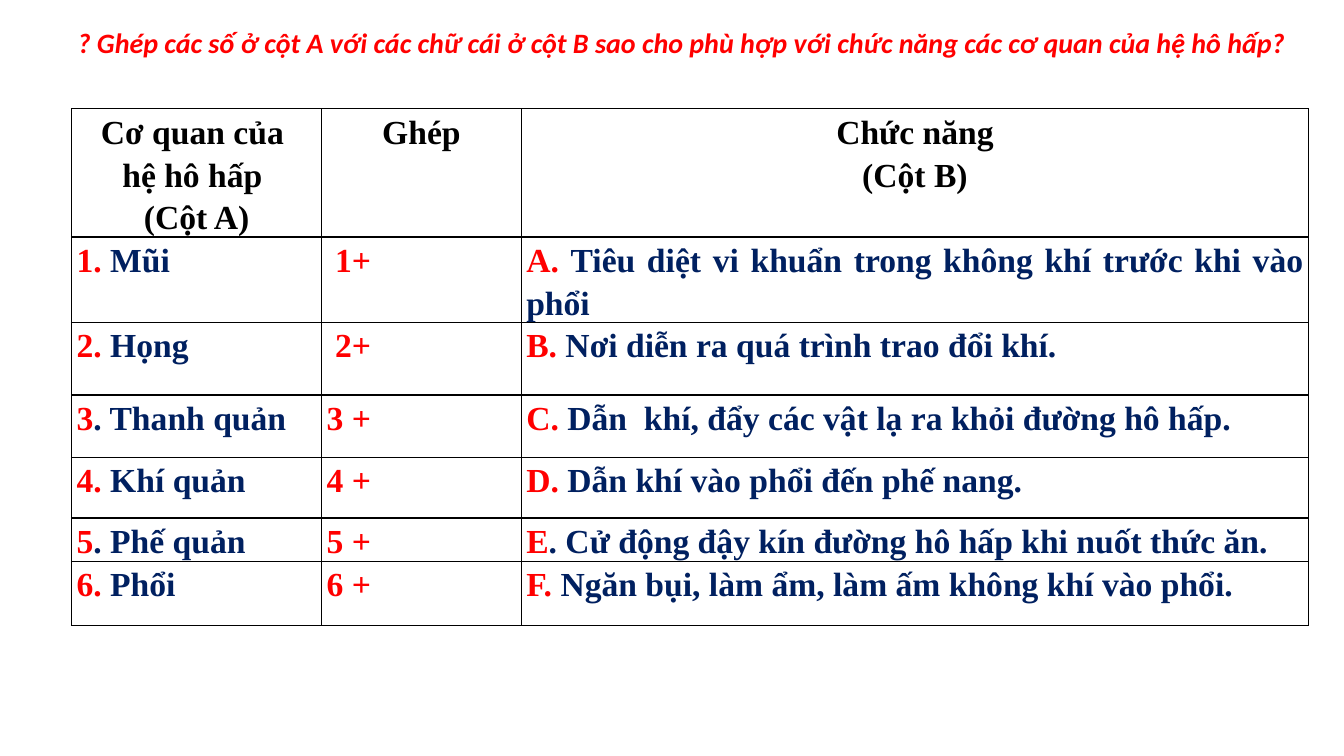
from lxml import etree
from pptx import Presentation
from pptx.dml.color import RGBColor
from pptx.enum.text import MSO_ANCHOR, PP_ALIGN
from pptx.oxml.ns import qn
from pptx.util import Inches, Pt

# Content: each cell is a list of paragraphs, each paragraph a list of (text, colour) runs
BLACK = RGBColor(0, 0, 0)
RED = RGBColor(255, 0, 0)
NAVY = RGBColor(0, 0x20, 0x60)
WHITE = RGBColor(255, 255, 255)

QUESTION = ("? Ghép các số ở cột A với các chữ cái ở cột B sao cho phù hợp "
            "với chức năng các cơ quan của hệ hô hấp?")
HEADERS = [["Cơ quan của ", "hệ hô hấp ", "(Cột A)"], ["Ghép"], ["Chức năng", "(Cột B)"]]
MATCHES = [  # number, organ, answer space, letter, function
    ("1. ", "Mũi", " 1+", "A. ", "Tiêu diệt vi khuẩn trong không khí trước khi vào phổi"),
    ("2. ", "Họng", " 2+ ", "B. ", "Nơi diễn ra quá trình trao đổi khí."),
    ("3", ". Thanh quản", "3 + ", "C. ", "Dẫn  khí, đẩy các vật lạ ra khỏi đường hô hấp."),
    ("4. ", "Khí quản", "4 + ", "D. ", "Dẫn khí vào phổi đến phế nang."),
    ("5", ". Phế quản", "5 +", "E", ". Cử động đậy kín đường hô hấp khi nuốt thức ăn."),
    ("6. ", "Phổi", "6 + ", "F. ", "Ngăn bụi, làm ẩm, làm ấm không khí vào phổi."),
]

# Layout in inches
SLIDE_SIZE = (13.33, 7.5)
TITLE_BOX = (0.67, 0.2, 12.42, 0.44)
TABLE_ORIGIN = (0.71, 1.08)
COLUMN_WIDTHS = (2.48, 1.98, 7.81)
ROW_HEIGHTS = (0.88, 0.69, 0.72, 0.62, 0.6, 0.43, 0.64)
CELL_MARGIN = 0.05

CENTER, JUSTIFY, LEFT = PP_ALIGN.CENTER, PP_ALIGN.JUSTIFY, PP_ALIGN.LEFT
MIDDLE, TOP = MSO_ANCHOR.MIDDLE, MSO_ANCHOR.TOP


def write_text(frame, paragraphs, font="Times New Roman", size=24, italic=False,
               align=JUSTIFY, spacing=1.15):
    for index, runs in enumerate(paragraphs):
        paragraph = frame.add_paragraph() if index else frame.paragraphs[0]
        paragraph.alignment = align
        paragraph.line_spacing = spacing
        paragraph.space_before = Pt(0)
        for text, color in runs:
            run = paragraph.add_run()
            run.text = text
            run.font.name = font
            run.font.size = Pt(size)
            run.font.bold = True
            run.font.italic = italic
            run.font.color.rgb = color


def add_borders(cell):
    properties = cell._tc.get_or_add_tcPr()
    for index, side in enumerate(("lnL", "lnR", "lnT", "lnB")):
        line = etree.Element(qn("a:" + side), w=str(Pt(1)))
        fill = etree.SubElement(line, qn("a:solidFill"))
        etree.SubElement(fill, qn("a:srgbClr"), val=str(BLACK))
        properties.insert(index, line)


def add_match_table(slide):
    rows = [[[[(line, BLACK)] for line in header] for header in HEADERS]]
    for number, organ, answer, letter, function in MATCHES:
        rows.append([[[(number, RED), (organ, NAVY)]],
                     [[(answer, RED)]],
                     [[(letter, RED), (function, NAVY)]]])

    left, top = TABLE_ORIGIN
    table = slide.shapes.add_table(
        len(rows), len(COLUMN_WIDTHS), Inches(left), Inches(top),
        Inches(sum(COLUMN_WIDTHS)), Inches(sum(ROW_HEIGHTS))).table
    table.horz_banding = False
    for column, width in zip(table.columns, COLUMN_WIDTHS):
        column.width = Inches(width)
    for row, height in zip(table.rows, ROW_HEIGHTS):
        row.height = Inches(height)

    for row_index, row in enumerate(rows):
        for column_index, paragraphs in enumerate(row):
            cell = table.cell(row_index, column_index)
            cell.margin_left = cell.margin_right = Inches(CELL_MARGIN)
            cell.margin_top = cell.margin_bottom = 0
            cell.vertical_anchor = TOP
            cell.fill.solid()
            cell.fill.fore_color.rgb = WHITE
            add_borders(cell)
            write_text(cell.text_frame, paragraphs, align=JUSTIFY if row_index else CENTER)


def main():
    presentation = Presentation()
    presentation.slide_width, presentation.slide_height = map(Inches, SLIDE_SIZE)
    slide = presentation.slides.add_slide(presentation.slide_layouts[5])

    # Question
    title = slide.shapes.title
    title.left, title.top, title.width, title.height = map(Inches, TITLE_BOX)
    title.fill.solid()
    title.fill.fore_color.rgb = WHITE
    title.text_frame.word_wrap = True
    title.text_frame.vertical_anchor = MIDDLE
    write_text(title.text_frame, [[(QUESTION, RED)]], font="Calibri", size=20,
               italic=True, align=LEFT, spacing=1.0)

    # Organs and functions
    add_match_table(slide)
    presentation.save("out.pptx")


if __name__ == "__main__":
    main()
